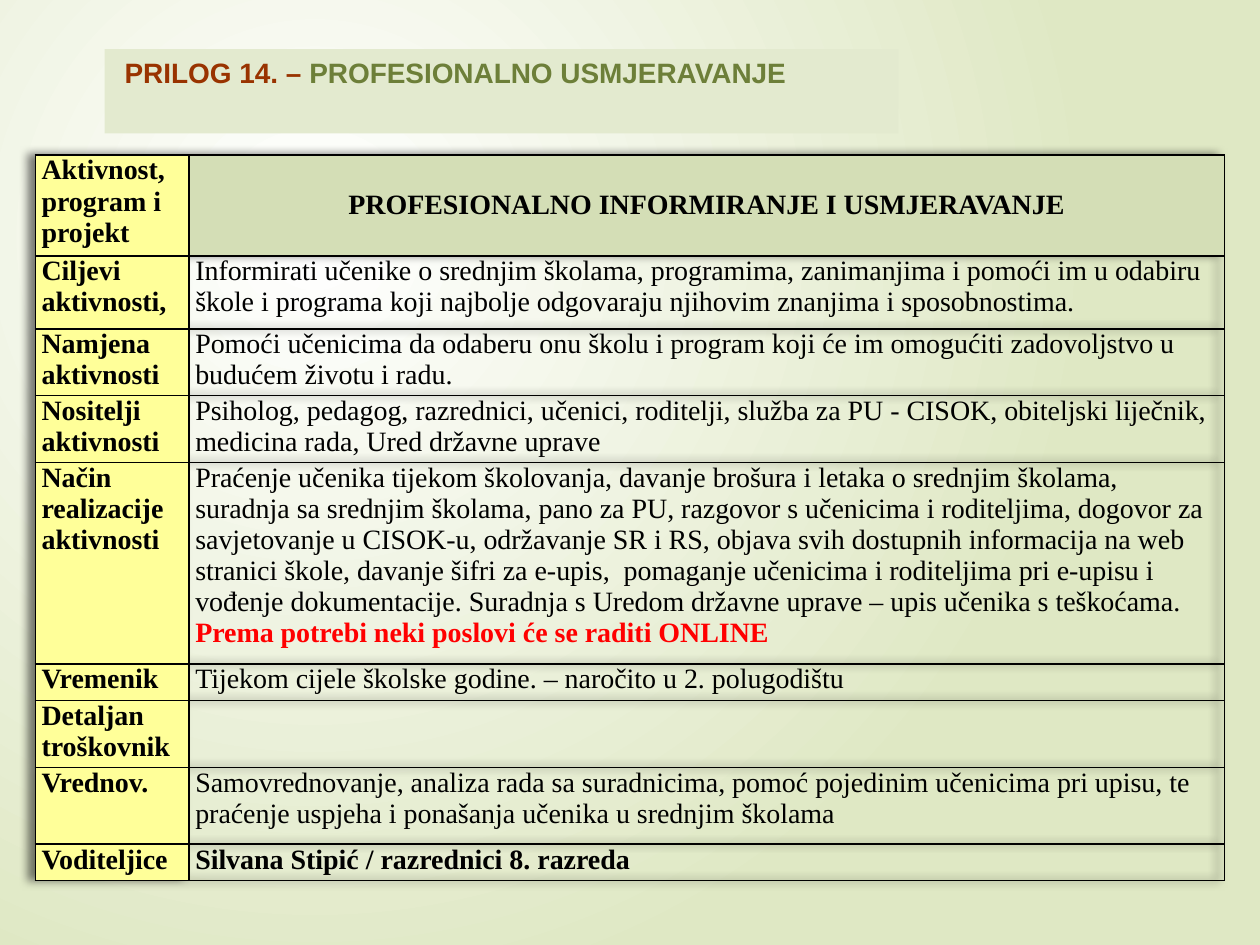
"""Build a slide with a titled activity plan table for vocational guidance."""
from lxml import etree
from pptx import Presentation
from pptx.dml.color import RGBColor
from pptx.enum.shapes import MSO_SHAPE
from pptx.enum.text import MSO_ANCHOR, PP_ALIGN
from pptx.oxml.ns import qn
from pptx.util import Inches, Pt

RECTANGLE = MSO_SHAPE.RECTANGLE
TOP, MIDDLE = MSO_ANCHOR.TOP, MSO_ANCHOR.MIDDLE
LEFT, CENTER = PP_ALIGN.LEFT, PP_ALIGN.CENTER

COLORS = {
    "white": "FFFFFF",
    "backdrop": "DFE8C4",
    "title_box": "E3EACF",
    "title_number": "993300",
    "title_name": "6D7F39",
    "label": "FFFF99",
    "header": "D4DEB6",
    "text": "000000",
    "notice": "FF0000",
}
TITLE_FONT, TABLE_FONT = "Arial", "Times New Roman"
COLUMN_WIDTHS = [1.22, 8.22]
HEADER = ("Aktivnost, program i projekt", "PROFESIONALNO INFORMIRANJE I USMJERAVANJE", 0.8)
ACTIVITIES = [
    ("Ciljevi aktivnosti,",
     "Informirati učenike o srednjim školama, programima, zanimanjima i pomoći im u odabiru "
     "škole i programa koji najbolje odgovaraju njihovim znanjima i sposobnostima.", 0.58),
    ("Namjena aktivnosti",
     "Pomoći učenicima da odaberu onu školu i program koji će im omogućiti zadovoljstvo u "
     "budućem životu i radu.", 0.53),
    ("Nositelji aktivnosti",
     "Psiholog, pedagog, razrednici, učenici, roditelji, služba za PU - CISOK, obiteljski "
     "liječnik, medicina rada, Ured državne uprave", 0.53),
    ("Način realizacije aktivnosti",
     "Praćenje učenika tijekom školovanja, davanje brošura i letaka o srednjim školama, "
     "suradnja sa srednjim školama, pano za PU, razgovor s učenicima i roditeljima, dogovor za "
     "savjetovanje u CISOK-u, održavanje SR i RS, objava svih dostupnih informacija na web "
     "stranici škole, davanje šifri za e-upis,  pomaganje učenicima i roditeljima pri e-upisu i "
     "vođenje dokumentacije. Suradnja s Uredom državne uprave – upis učenika s teškoćama.", 1.6),
    ("Vremenik", "Tijekom cijele školske godine. – naročito u 2. polugodištu", 0.29),
    ("Detaljan troškovnik", "", 0.53),
    ("Vrednov.",
     "Samovrednovanje, analiza rada sa suradnicima, pomoć pojedinim učenicima pri upisu, te "
     "praćenje uspjeha i ponašanja učenika u srednjim školama", 0.61),
]
LEADERS = ("Voditeljice", "Silvana Stipić / razrednici 8. razreda", 0.29)
NOTICE = "Prema potrebi neki poslovi će se raditi ONLINE"
NOTICE_LABEL = "Način realizacije aktivnosti"


def rgb(name):
    """Return the named colour."""
    return RGBColor.from_string(COLORS[name])


def add_run(paragraph, text, font_name, color="text", bold=False):
    """Append one formatted run."""
    run = paragraph.add_run()
    run.text = text
    run.font.name = font_name
    run.font.size = Pt(16)
    run.font.bold = bold
    run.font.color.rgb = rgb(color)


def set_background(slide):
    """Fill the background with a circular gradient."""
    fill = slide.background.fill
    fill.gradient()
    for stop, color in zip(fill.gradient_stops, ("white", "backdrop")):
        stop.color.rgb = rgb(color)
    gradient = slide.element.find(".//" + qn("a:gradFill"))
    gradient.remove(gradient.find(qn("a:lin")))
    circle = etree.SubElement(gradient, qn("a:path"), {"path": "circle"})
    focus = {"l": "50000", "t": "50000", "r": "100000", "b": "100000"}
    etree.SubElement(circle, qn("a:fillToRect"), focus)


def add_title(slide):
    """Add the title box with its two-coloured heading."""
    shape = slide.shapes.add_shape(
        RECTANGLE, Inches(0.83), Inches(0.39), Inches(6.3), Inches(0.67))
    shape.shadow.inherit = False
    shape.fill.solid()
    shape.fill.fore_color.rgb = rgb("title_box")
    shape.line.fill.background()
    frame = shape.text_frame
    frame.word_wrap = True
    frame.vertical_anchor = TOP
    frame.margin_left = Inches(0.16)
    paragraph = frame.paragraphs[0]
    paragraph.alignment = LEFT
    add_run(paragraph, "PRILOG 14. – ", TITLE_FONT, "title_number", True)
    add_run(paragraph, "PROFESIONALNO USMJERAVANJE", TITLE_FONT, "title_name", True)


def set_borders(cell):
    """Draw a thin black line on all sides of a cell."""
    properties = cell._tc.get_or_add_tcPr()
    for index, side in enumerate(("lnL", "lnR", "lnT", "lnB")):
        line = etree.Element(qn("a:" + side), {"w": str(Pt(1))})
        fill = etree.SubElement(line, qn("a:solidFill"))
        etree.SubElement(fill, qn("a:srgbClr"), {"val": COLORS["text"]})
        properties.insert(index, line)


def fill_cell(cell, text, fill=None, bold=False):
    """Set the text, margins, fill and borders of a cell."""
    cell.margin_left = cell.margin_right = Inches(0.05)
    cell.margin_top = cell.margin_bottom = 0
    if fill:
        cell.fill.solid()
        cell.fill.fore_color.rgb = rgb(fill)
    else:
        cell.fill.background()
    if text:
        add_run(cell.text_frame.paragraphs[0], text, TABLE_FONT, bold=bold)
    set_borders(cell)


def add_table_shadow(table):
    """Give the table a soft shadow to the left."""
    effects = etree.Element(qn("a:effectLst"))
    shadow = etree.SubElement(effects, qn("a:outerShdw"), {
        "blurRad": str(Pt(5)), "dist": str(Pt(4)), "dir": "10800000"})
    color = etree.SubElement(shadow, qn("a:srgbClr"), {"val": COLORS["text"]})
    etree.SubElement(color, qn("a:alpha"), {"val": "50000"})
    table._tbl.tblPr.insert(0, effects)


def add_activity_table(slide):
    """Add the plan table with one activity aspect per row."""
    rows = [HEADER, *ACTIVITIES, LEADERS]
    table = slide.shapes.add_table(
        len(rows), len(COLUMN_WIDTHS), Inches(0.28), Inches(1.23),
        Inches(sum(COLUMN_WIDTHS)), Inches(sum(row[2] for row in rows))).table
    table.horz_banding = table.first_row = False
    add_table_shadow(table)
    for column, width in zip(table.columns, COLUMN_WIDTHS):
        column.width = Inches(width)
    for index, (label, text, height) in enumerate(rows):
        table.rows[index].height = Inches(height)
        is_header = index == 0
        content = table.cell(index, 1)
        fill_cell(table.cell(index, 0), label, "label", True)
        fill_cell(content, text, "header" if is_header else None,
                  is_header or label == LEADERS[0])
        if is_header:
            content.vertical_anchor = MIDDLE
            content.text_frame.paragraphs[0].alignment = CENTER
        if label == NOTICE_LABEL:
            add_run(content.text_frame.add_paragraph(), NOTICE, TABLE_FONT, "notice", True)


def main():
    """Build and save the presentation."""
    presentation = Presentation()
    presentation.slide_width = Inches(10)
    presentation.slide_height = Inches(7.5)
    slide = presentation.slides.add_slide(presentation.slide_layouts[6])
    set_background(slide)
    add_activity_table(slide)
    add_title(slide)
    presentation.save("out.pptx")


if __name__ == "__main__":
    main()
